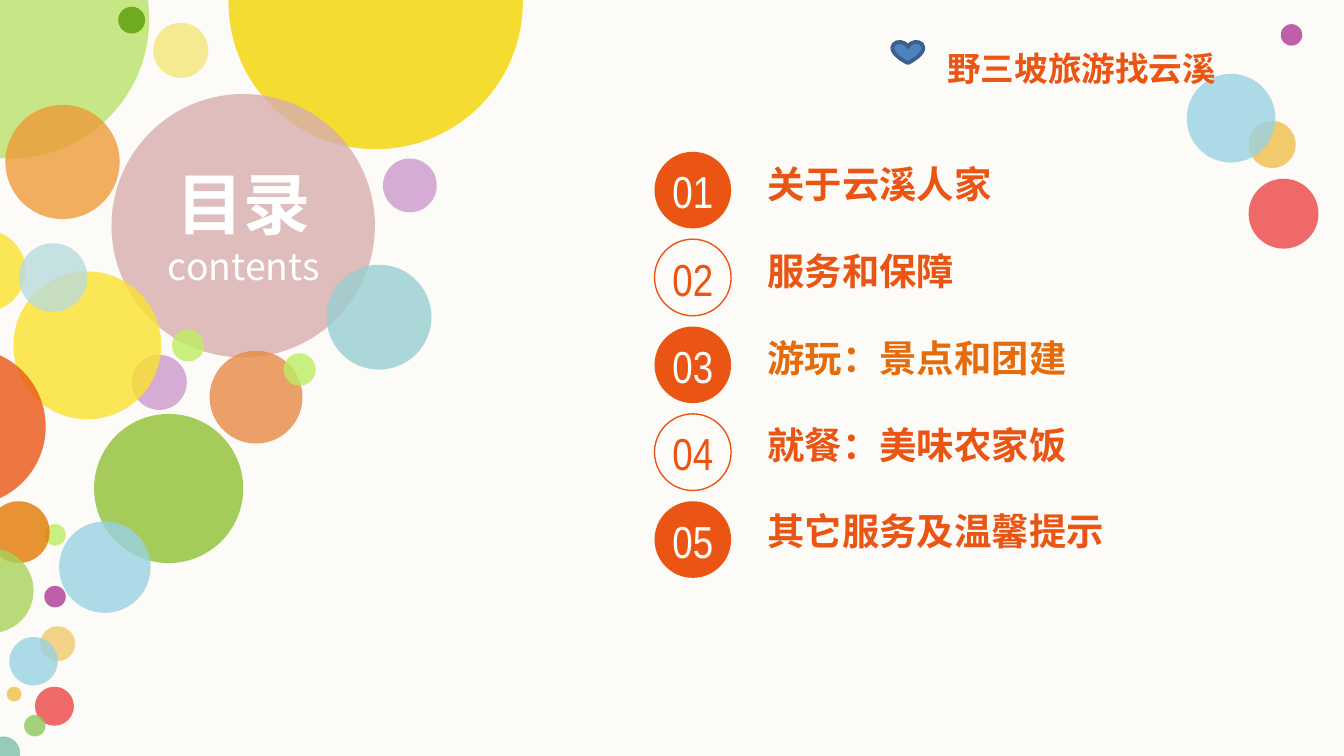
from dataclasses import dataclass

from lxml import etree
from pptx import Presentation
from pptx.dml.color import RGBColor
from pptx.enum import shapes, text
from pptx.oxml import ns
from pptx.util import Inches, Pt

COLOURS = {
    "cream": "FCFBF7", "white": "FFFFFF", "orange": "EA5514", "amber": "E46C0A",
    "lime": "BAE36B", "bright lime": "BCED61", "leaf": "6EAB1F", "grass": "A5CB5A",
    "meadow": "A9D25A", "fern": "8DC65B", "apricot": "ED9B38", "tan": "E78A47",
    "rust": "E27902", "pale yellow": "F5EA91", "yellow": "F4D500", "lemon": "FBE22D",
    "sand": "F0CA6C", "rose": "D8AEAF", "red": "EB4544", "lilac": "CB99CC",
    "purple": "B03896", "teal": "99CED2", "sea": "7BBFAA", "mist": "B9DBDD",
    "sky": "98D2E3", "blue": "4F81BD", "navy": "3A5F8C",
}
CJK = "Noto Sans CJK SC"


@dataclass
class Bubble:
    left: float
    top: float
    size: float
    colour: str
    opacity: int = 80


@dataclass
class Entry:
    label: str
    face: str = "Calibri"
    colour: str = "orange"


LEFT_BUBBLES = [
    Bubble(-0.96, -0.89, 2.07, "lime"), Bubble(0.88, 0.05, 0.2, "leaf", 100),
    Bubble(0.04, 0.78, 0.85, "apricot"), Bubble(1.14, 0.17, 0.41, "pale yellow", 100),
    Bubble(1.7, -1.08, 2.19, "yellow"), Bubble(0.83, 0.7, 1.96, "rose"),
    Bubble(2.43, 1.97, 0.78, "teal"), Bubble(2.85, 1.18, 0.4, "lilac"),
    Bubble(1.56, 2.61, 0.69, "tan"), Bubble(0.7, 3.08, 1.11, "grass", 100),
    Bubble(2.11, 2.63, 0.24, "bright lime"), Bubble(1.28, 2.45, 0.24, "bright lime"),
    Bubble(0.98, 2.64, 0.41, "lilac"), Bubble(0.1, 2.02, 1.1, "lemon"),
    Bubble(-0.42, 1.71, 0.61, "lemon"), Bubble(0.33, 3.9, 0.16, "bright lime"),
    Bubble(0.33, 4.36, 0.16, "purple"), Bubble(0.3, 4.66, 0.26, "sand"),
    Bubble(0.05, 5.11, 0.11, "sand", 100), Bubble(-0.1, 5.48, 0.25, "sea"),
    Bubble(0.26, 5.11, 0.29, "red"), Bubble(0.18, 5.32, 0.16, "fern"),
    Bubble(0.07, 4.74, 0.36, "sky"), Bubble(0.14, 1.81, 0.51, "mist"),
    Bubble(0.44, 3.88, 0.68, "sky"), Bubble(-0.09, 3.73, 0.46, "rust"),
    Bubble(-0.38, 4.08, 0.63, "meadow"), Bubble(-0.83, 2.59, 1.17, "orange"),
]
RIGHT_BUBBLES = [
    Bubble(9.53, 0.18, 0.16, "purple"), Bubble(9.29, 0.9, 0.35, "sand", 100),
    Bubble(9.29, 1.33, 0.52, "red"), Bubble(8.83, 0.55, 0.66, "sky"),
]
ENTRIES = [
    Entry("关于云溪人家", "Arial Narrow"),
    Entry("服务和保障", "Arial Narrow"),
    Entry("游玩：景点和团建", colour="amber"),
    Entry("就餐：美味农家饭"),
    Entry("其它服务及温馨提示"),
]
BADGE_LEFT, BADGE_TOP, BADGE_SIZE, PITCH = 4.87, 1.13, 0.57, 0.65


def rgb(colour: str) -> RGBColor:
    return RGBColor.from_string(COLOURS[colour])


def place(item, left: float, top: float, width: float, height: float) -> None:
    box = {"left": left, "top": top, "width": width, "height": height}
    for side, length in box.items():
        setattr(item, side, Inches(length))


def prepare_frame(frame, wrap: bool = True, inset: bool = False) -> None:
    settings = {"word_wrap": wrap, "auto_size": text.MSO_AUTO_SIZE.NONE,
                "vertical_anchor": text.MSO_ANCHOR.TOP}
    if not inset:
        settings.update(dict.fromkeys(
            ("margin_left", "margin_top", "margin_right", "margin_bottom"), 0))
    for name, value in settings.items():
        setattr(frame, name, value)


def write(paragraph, words: str, size: float, face: str, colour: str,
          bold: bool = False, align=text.PP_ALIGN.LEFT) -> None:
    paragraph.alignment = align
    run = paragraph.add_run()
    run.text = words
    for name, value in {"size": Pt(size), "name": face, "bold": bold}.items():
        setattr(run.font, name, value)
    run.font.color.rgb = rgb(colour)
    # East Asian typeface
    etree.SubElement(run.font._element, ns.qn("a:ea"), typeface=CJK)


def add_figure(slide, kind, left: float, top: float, width: float, height: float,
               fill: str = "", line: str = "", weight: float = 0.75):
    figure = slide.shapes.add_shape(
        kind, Inches(left), Inches(top), Inches(width), Inches(height))
    figure.shadow.inherit = False
    if fill:
        figure.fill.solid()
        figure.fill.fore_color.rgb = rgb(fill)
    else:
        figure.fill.background()
    if line:
        figure.line.color.rgb = rgb(line)
        figure.line.width = Pt(weight)
    else:
        figure.line.fill.background()
    return figure


def add_bubbles(slide, bubbles: list[Bubble]) -> None:
    for bubble in bubbles:
        disc = add_figure(slide, shapes.MSO_SHAPE.OVAL, bubble.left, bubble.top,
                          bubble.size, bubble.size, bubble.colour)
        if bubble.opacity < 100:
            tint = disc.element.spPr.find(".//" + ns.qn("a:srgbClr"))
            etree.SubElement(tint, ns.qn("a:alpha"), val=str(bubble.opacity * 1000))


def add_badge(slide, index: int) -> None:
    top = BADGE_TOP + index * PITCH
    solid = index % 2 == 0
    add_figure(slide, shapes.MSO_SHAPE.OVAL, BADGE_LEFT, top, BADGE_SIZE, BADGE_SIZE,
               fill="orange" if solid else "", line="" if solid else "orange")
    number = slide.shapes.add_textbox(
        Inches(BADGE_LEFT), Inches(top + 0.09), Inches(BADGE_SIZE), Inches(0.4))
    prepare_frame(number.text_frame)
    write(number.text_frame.paragraphs[0], f"{index + 1:02}", 24, "Arial Narrow",
          "cream" if solid else "orange", align=text.PP_ALIGN.CENTER)


def fill_title(slide) -> None:
    title = slide.shapes.title
    slide.shapes.element.append(title.element)  # bring in front of the bubbles
    place(title, 1.06, 1.21, 1.51, 0.94)
    prepare_frame(title.text_frame)
    center = text.PP_ALIGN.CENTER
    write(title.text_frame.paragraphs[0], "目录", 36, CJK, "white", True, center)
    write(title.text_frame.add_paragraph(), "contents", 20, CJK, "white", False, center)


def fill_contents(slide, entries: list[Entry]) -> None:
    contents = slide.placeholders[1]
    slide.shapes.element.append(contents.element)
    place(contents, 5.71, 1.2, 2.91, 3)
    frame = contents.text_frame
    prepare_frame(frame)
    for index, entry in enumerate(entries):
        line = frame.add_paragraph() if index else frame.paragraphs[0]
        write(line, entry.label, 20, entry.face, entry.colour, bold=True)
        line.space_before = Pt(0)
        line.space_after = Pt(22.5)
        # No bullet, no hanging indent
        properties = line._p.get_or_add_pPr()
        for name in ("marL", "indent"):
            properties.set(name, "0")
        etree.SubElement(properties, ns.qn("a:buNone"))


def main() -> None:
    deck = Presentation()
    deck.slide_width, deck.slide_height = Inches(10), Inches(10 * 9 / 16)
    slide = deck.slides.add_slide(deck.slide_layouts[1])
    slide.background.fill.solid()
    slide.background.fill.fore_color.rgb = rgb("cream")

    # Left decoration and heading
    add_bubbles(slide, LEFT_BUBBLES)
    fill_title(slide)

    # Numbered contents
    for index in range(len(ENTRIES)):
        add_badge(slide, index)
    fill_contents(slide, ENTRIES)

    # Right decoration and slogan
    add_bubbles(slide, RIGHT_BUBBLES)
    slogan = slide.shapes.add_textbox(Inches(6.95), Inches(0.31), Inches(2.28), Inches(0.4))
    prepare_frame(slogan.text_frame, wrap=False, inset=True)
    write(slogan.text_frame.paragraphs[0], "野三坡旅游找云溪", 18, "Calibri", "orange", True)
    add_figure(slide, shapes.MSO_SHAPE.HEART, 6.64, 0.31, 0.23, 0.16, "blue", "navy", 2)

    deck.save("out.pptx")


if __name__ == "__main__":
    main()
